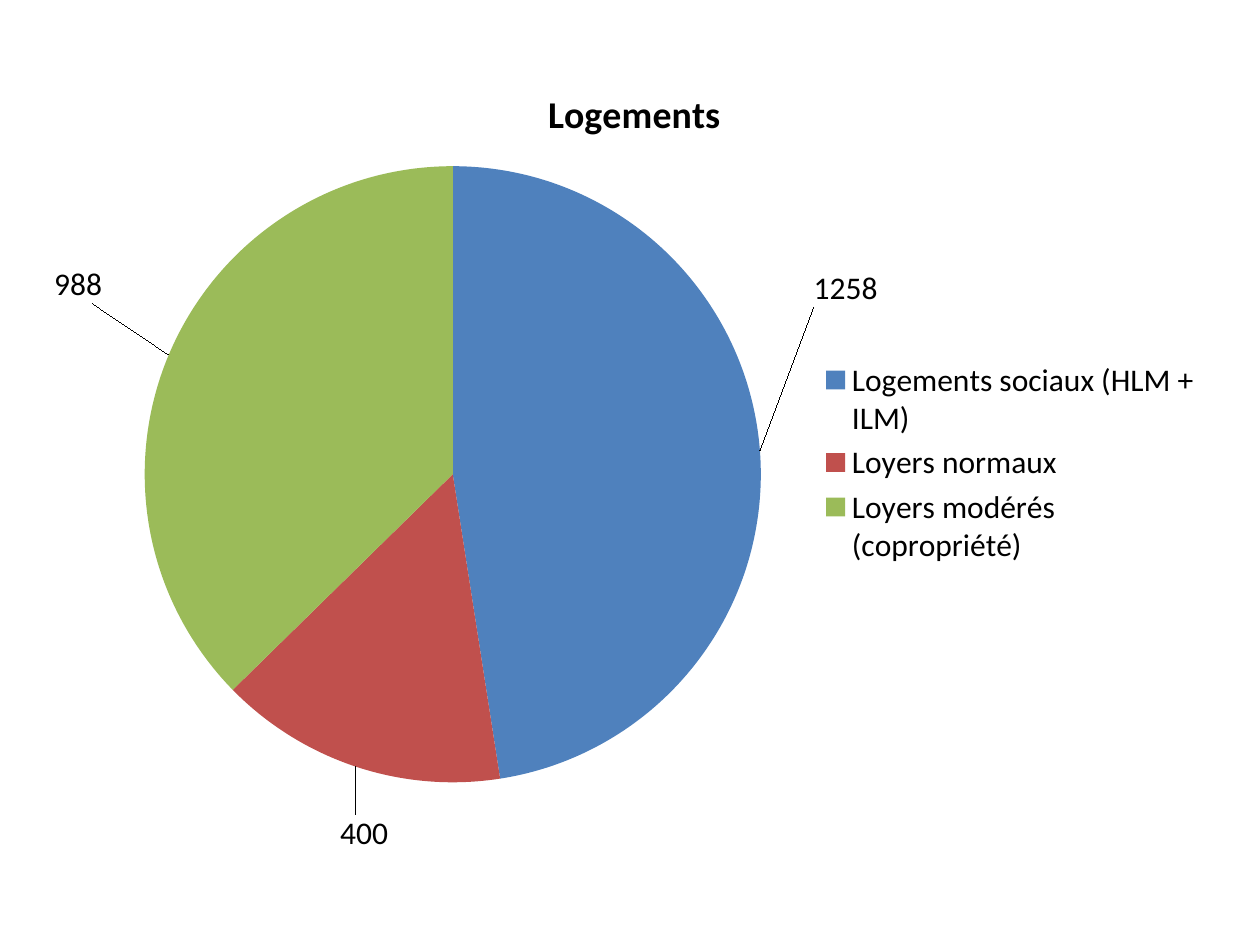
"""Build a slide with one pie chart of housing by rent type."""
from lxml.etree import SubElement
from pptx import Presentation
from pptx.chart.data import CategoryChartData
from pptx.dml.color import RGBColor
from pptx.enum.chart import XL_CHART_TYPE, XL_LABEL_POSITION, XL_LEGEND_POSITION
from pptx.oxml.ns import qn
from pptx.util import Inches, Pt

COLORS = {"text": "000000", "social": "4F81BD", "normal": "C0504D", "moderate": "9BBB59"}
HOUSING = [
    ("Logements sociaux (HLM + ILM)", 1258, "social", (0.04, -0.2)),
    ("Loyers normaux", 400, "normal", (0.03, 0.05)),
    ("Loyers modérés (copropriété)", 988, "moderate", (-0.06, -0.06)),
]


class PageBuilder:
    """Hold the style and the current slide."""

    def __init__(self, deck, font="Calibri", size=18):
        self.deck, self.font, self.size = deck, font, size
        self.page = deck.slides.add_slide(deck.slide_layouts[6])

    def color(self, name):
        """Return the named colour."""
        return RGBColor.from_string(COLORS[name])

    def style(self, font, size, bold=False):
        """Apply the page's typeface and text colour to a font."""
        font.name, font.size, font.bold = self.font, Pt(size), bold
        font.color.rgb = self.color("text")

    def layout(self, parent, index, **values):
        """Insert a manual chart layout into parent at index."""
        layout = SubElement(parent, qn("c:layout"))
        manual = SubElement(layout, qn("c:manualLayout"))
        for tag, value in values.items():
            SubElement(manual, qn(f"c:{tag}")).set("val", str(value))
        parent.insert(index, layout)

    def pie(self, title, rows, left, top, width, height, plot_area):
        """Add a pie chart, placed in shares of the slide's size."""
        data = CategoryChartData()
        data.categories = [row[0] for row in rows]
        data.add_series(title, [row[1] for row in rows])
        across, down = self.deck.slide_width, self.deck.slide_height
        chart = self.page.shapes.add_chart(
            XL_CHART_TYPE.PIE, int(left * across), int(top * down),
            int(width * across), int(height * down), data).chart
        self.style(chart.font, self.size)
        chart.has_title = True
        para = chart.chart_title.text_frame.paragraphs[0]
        para.text = title
        self.style(para.font, self.size * 1.2, bold=True)
        chart.has_legend = True
        chart.legend.position = XL_LEGEND_POSITION.RIGHT
        chart.legend.include_in_layout = False
        self.slices(chart.plots[0], rows)
        area = chart.element.find(f".//{qn('c:plotArea')}")
        for old in area.findall(qn("c:layout")):
            area.remove(old)
        self.layout(area, 0, layoutTarget="inner", xMode="edge", yMode="edge", **plot_area)

    def slices(self, plot, rows):
        """Colour the slices and move their value labels."""
        plot.vary_by_categories = True
        series = plot.series[0]
        series.data_labels.show_value = True
        series.data_labels.position = XL_LABEL_POSITION.BEST_FIT
        for index, (_, _, color, (x, y)) in enumerate(rows):
            point = series.points[index]
            point.format.fill.solid()
            point.format.fill.fore_color.rgb = self.color(color)
            point.data_label.position = XL_LABEL_POSITION.BEST_FIT
        for label, row in zip(series.data_labels._element.findall(qn("c:dLbl")), rows):
            self.layout(label, 1, x=row[3][0], y=row[3][1])


def main():
    """Build and save the deck."""
    deck = Presentation()
    deck.slide_width, deck.slide_height = Inches(10), Inches(7.5)
    builder = PageBuilder(deck)
    builder.pie("Logements", HOUSING, 0.043, 0.061, 0.921, 0.857,
                {"x": 0.078, "y": 0.134, "w": 0.531, "h": 0.761})
    deck.save("out.pptx")


if __name__ == "__main__":
    main()
